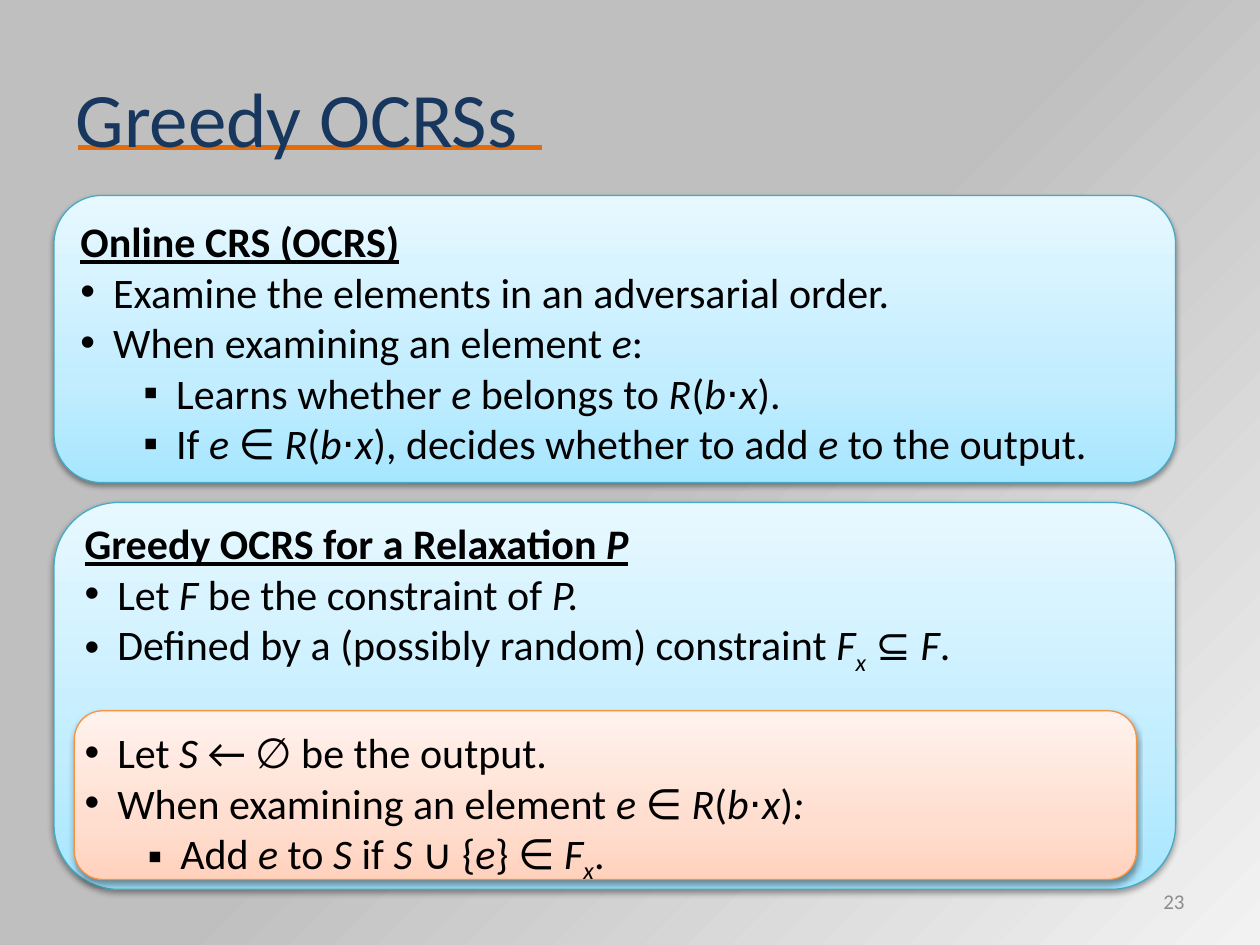
"""Build the slide that defines greedy online contention resolution schemes."""
from copy import deepcopy

from lxml import etree
from pptx import Presentation
from pptx.dml.color import RGBColor
from pptx.enum.shapes import MSO_CONNECTOR, MSO_SHAPE
from pptx.enum.text import MSO_ANCHOR, MSO_AUTO_SIZE, PP_ALIGN
from pptx.oxml.ns import qn
from pptx.util import Cm, Pt

ROUNDED = MSO_SHAPE.ROUNDED_RECTANGLE
STRAIGHT = MSO_CONNECTOR.STRAIGHT
TOP, MIDDLE = MSO_ANCHOR.TOP, MSO_ANCHOR.MIDDLE
LEFT, RIGHT = PP_ALIGN.LEFT, PP_ALIGN.RIGHT
NO_AUTOFIT = MSO_AUTO_SIZE.NONE
FONT = "Calibri"
BULLETS = ["•", "▪"]
BLUE = [(0, "A7E6FF"), (0.35, "C1EDFF"), (1, "E7F8FF")]
ORANGE = [(0, "FFD2BD"), (0.35, "FFDED0"), (1, "FFF2ED")]
color = RGBColor.from_string

OCRS_LINES = [
    (None, "Online CRS (OCRS)"),
    (0, "Examine the elements in an adversarial order."),
    (0, "When examining an element *e*:"),
    (1, "Learns whether *e* belongs to *R*(*b*⋅*x*)."),
    (1, "If *e* ∈ *R*(*b*⋅*x*), decides whether to add *e* to the output."),
]
GREEDY_LINES = [
    (None, "Greedy OCRS for a Relaxation *P*"),
    (0, "Let *F* be the constraint of *P.*"),
    (0, "Defined by a (possibly random) constraint *F**_x* ⊆ *F*."),
    (0, "Let *S* ← ∅ be the output."),
    (0, "When examining an element *e* ∈ *R*(*b*⋅*x*)*:*"),
    (1, "Add *e* to *S* if *S* ∪ {*e*} ∈ *F**_x*."),
]


def paint_gradient(fill, element, stops, angle):
    """Fill with the given (position, colour) stops."""
    fill.gradient()
    fill.gradient_angle = angle
    stop_list = element.find(".//" + qn("a:gsLst"))
    while len(stop_list) < len(stops):
        stop_list.append(deepcopy(stop_list[0]))
    for stop, (position, hex_color) in zip(fill.gradient_stops, stops):
        stop.position = position
        stop.color.rgb = color(hex_color)


def write_list(text_frame, lines):
    """Write (level, text) lines; *x* is italic and *_x* an italic subscript."""
    text_frame.word_wrap = True
    text_frame.auto_size = NO_AUTOFIT
    text_frame.vertical_anchor = TOP
    for index, (level, text) in enumerate(lines):
        paragraph = text_frame.add_paragraph() if index else text_frame.paragraphs[0]
        paragraph.level = level or 0
        paragraph.alignment = LEFT
        paragraph.space_before = Pt(29 if text.startswith("Let *S*") else 0)
        properties = paragraph._p.get_or_add_pPr()
        properties.set("marL", str(Cm(1.93 if level else 0.66)))
        properties.set("indent", str(Cm(-0.66)))
        if level is None:
            etree.SubElement(properties, qn("a:buNone"))
        else:
            etree.SubElement(properties, qn("a:buFont"), typeface="Arial")
            etree.SubElement(properties, qn("a:buChar"), char=BULLETS[level])
        for number, piece in enumerate(text.split("*")):
            if not piece:
                continue
            run = paragraph.add_run()
            run.text = piece.lstrip("_")
            run.font.name = FONT
            run.font.size = Pt(24)
            run.font.color.rgb = color("000000")
            run.font.bold = run.font.underline = level is None
            run.font.italic = number % 2 == 1
            if piece.startswith("_"):
                run._r.get_or_add_rPr().set("baseline", "-25000")


presentation = Presentation()
presentation.slide_width = Cm(25.4)
presentation.slide_height = Cm(19.05)
slide = presentation.slides.add_slide(presentation.slide_layouts[1])
paint_gradient(slide.background.fill, slide._element, [(0.5, "BFBFBF"), (1, "F2F2F2")], 315)

underline = slide.shapes.add_connector(STRAIGHT, Cm(1.58), Cm(2.97), Cm(10.92), Cm(2.97))
underline.line.color.rgb = color("E46C0A")
underline.line.width = Pt(3)
etree.SubElement(underline._element.spPr, qn("a:effectLst"))

panels = []
for left, top, width, height, stops, outline in [
    (1.09, 3.94, 22.61, 5.79, BLUE, "46AAC5"),
    (1.09, 10.13, 22.61, 7.8, BLUE, "46AAC5"),
    (1.5, 14.33, 21.41, 3.4, ORANGE, "F69240"),
]:
    panel = slide.shapes.add_shape(ROUNDED, Cm(left), Cm(top), Cm(width), Cm(height))
    paint_gradient(panel.fill, panel._element, stops, 90)
    panel.line.color.rgb = color(outline)
    panel.line.width = Pt(0.75)
    panel.shadow.inherit = False
    effects = panel._element.spPr.find(qn("a:effectLst"))
    shadow = etree.SubElement(effects, qn("a:outerShdw"), blurRad=str(Pt(3.1)),
                              dist=str(Pt(1.6)), dir="5400000", rotWithShape="0")
    shadow_color = etree.SubElement(shadow, qn("a:srgbClr"), val="000000")
    etree.SubElement(shadow_color, qn("a:alpha"), val="38000")
    panels.append(panel)

ocrs_frame = panels[0].text_frame
ocrs_frame.margin_left = Cm(0.25)
ocrs_frame.margin_right = ocrs_frame.margin_top = ocrs_frame.margin_bottom = Cm(0.13)
write_list(ocrs_frame, OCRS_LINES)

title, body = slide.placeholders
for placeholder, (left, top, width, height) in [
    (title, (1.27, 0.76, 22.86, 3.18)),
    (body, (1.45, 10.31, 19, 8.2)),
]:
    placeholder.left, placeholder.top = Cm(left), Cm(top)
    placeholder.width, placeholder.height = Cm(width), Cm(height)
    slide.shapes._spTree.append(placeholder._element)
write_list(body.text_frame, GREEDY_LINES)

number_box = slide.shapes.add_textbox(Cm(18.21), Cm(17.65), Cm(5.92), Cm(1.02))
for shape, text, alignment, size, hex_color in [
    (title, "Greedy OCRSs", LEFT, 44, "17375E"),
    (number_box, "23", RIGHT, 12, "8C8C8C"),
]:
    text_frame = shape.text_frame
    text_frame.text = text
    text_frame.word_wrap = True
    text_frame.vertical_anchor = MIDDLE
    paragraph = text_frame.paragraphs[0]
    paragraph.alignment = alignment
    font = paragraph.runs[0].font
    font.name = FONT
    font.size = Pt(size)
    font.color.rgb = color(hex_color)

presentation.save("out.pptx")
